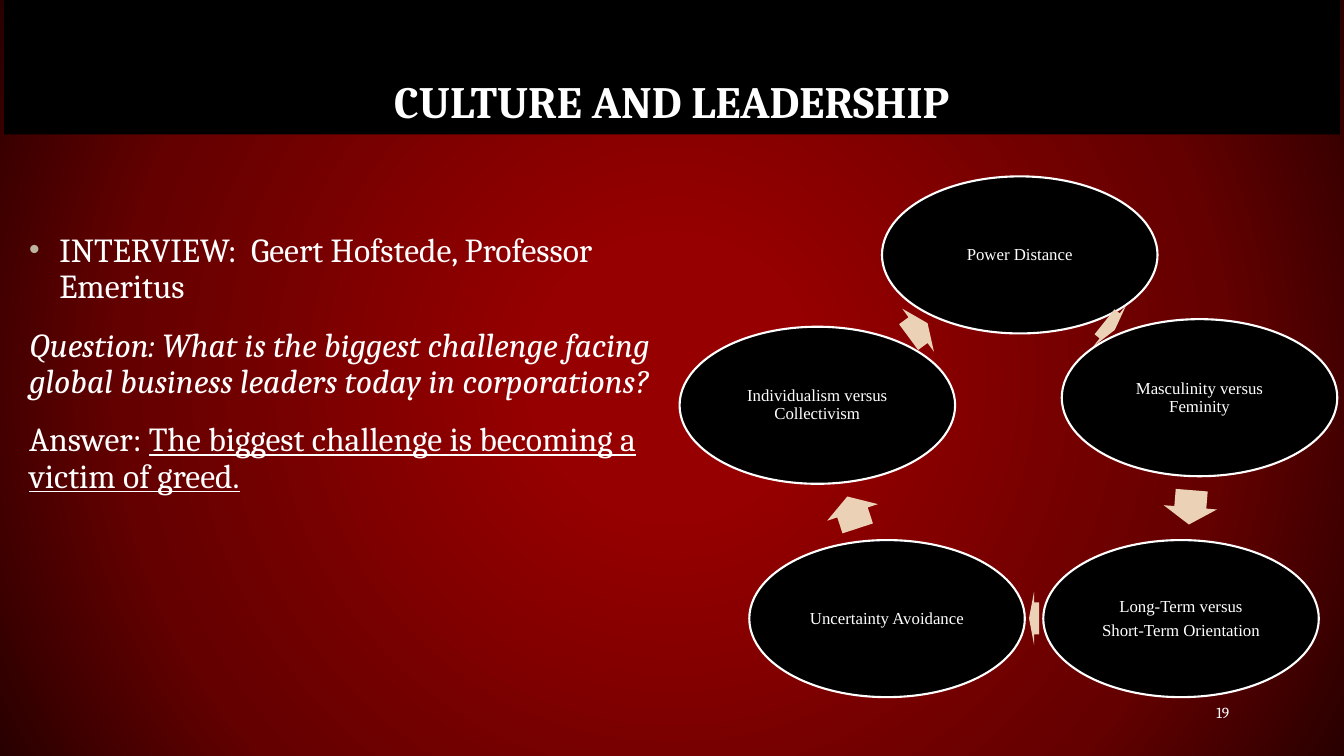
from dataclasses import dataclass

from pptx import Presentation
from pptx.dml.color import RGBColor
from pptx.enum.shapes import MSO_SHAPE
from pptx.enum.text import MSO_ANCHOR, PP_ALIGN
from pptx.oxml import parse_xml
from pptx.oxml.ns import nsdecls, qn
from pptx.util import Inches, Pt


@dataclass(frozen=True)
class Theme:
    """Colours, fonts and type sizes of the slide."""
    ink: str = "FFFFFF"
    panel: str = "000000"
    arrow: str = "EBD1B5"
    bullet: str = "BCB49E"
    glow: tuple = ((17, "960000"), (71, "650000"), (100, "290000"))
    serif: str = "Cambria"
    label_font: str = "Times New Roman"
    title_size: int = 32
    body_size: int = 24
    label_size: int = 12
    number_size: int = 11
    outline: float = 1.5


def apply(target, formats):
    """Set each attribute of target from a dict of format values."""
    for name, value in formats.items():
        setattr(target, name, value)


class SlideBuilder:
    """Draw styled elements on a grid of 160 columns by 90 rows."""
    columns, rows = 160, 90

    def __init__(self, deck, theme):
        """Open a blank page in the deck."""
        self.theme = theme
        self.column = deck.slide_width / self.columns
        self.row = deck.slide_height / self.rows
        self.page = deck.slides.add_slide(deck.slide_layouts[6])

    def place(self, left, top, width, height):
        """Turn grid cells into slide lengths."""
        return (round(left * self.column), round(top * self.row),
                round(width * self.column), round(height * self.row))

    def background(self):
        """Fill the page with a radial glow."""
        self.page.background.fill.solid()
        stops = "".join(
            f'<a:gs pos="{share * 1000}"><a:srgbClr val="{colour}"/></a:gs>'
            for share, colour in self.theme.glow)
        gradient = parse_xml(
            f'<a:gradFill {nsdecls("a")} rotWithShape="1"><a:gsLst>{stops}</a:gsLst>'
            '<a:path path="circle"><a:fillToRect l="50000" t="50000" r="50000" b="50000"/>'
            '</a:path></a:gradFill>')
        solid = next(self.page.element.iter(qn("a:solidFill")))
        solid.getparent().replace(solid, gradient)

    def shape(self, kind, cells, fill, outlined=False):
        """Add a flat preset shape."""
        shape = self.page.shapes.add_shape(kind, *self.place(*cells))
        shape.shadow.inherit = False
        shape.fill.solid()
        shape.fill.fore_color.rgb = RGBColor.from_string(fill)
        if outlined:
            shape.line.color.rgb = RGBColor.from_string(self.theme.ink)
            shape.line.width = Pt(self.theme.outline)
        else:
            shape.line.fill.background()
        return shape

    def text_box(self, cells):
        """Add an empty text box."""
        return self.page.shapes.add_textbox(*self.place(*cells))

    def set_text(self, box, paragraphs, font, layout,
                 anchor=MSO_ANCHOR.TOP, insets=(0.13, 0.07)):
        """Fill a box with paragraphs given as lists of (text, format) spans."""
        across, down = map(Inches, insets)
        frame = box.text_frame
        apply(frame, {"word_wrap": True, "vertical_anchor": anchor,
                      "margin_left": across, "margin_right": across,
                      "margin_top": down, "margin_bottom": down})
        for index, spans in enumerate(paragraphs):
            para = frame.paragraphs[0] if index == 0 else frame.add_paragraph()
            apply(para, layout)
            for text, formats in spans:
                span = para.add_run()
                span.text = text
                apply(span.font, {**font, **formats})
                span.font.color.rgb = RGBColor.from_string(self.theme.ink)

    def bullet(self, para):
        """Give a paragraph a hanging bullet."""
        properties = para._p.get_or_add_pPr()
        properties.set("marL", str(Inches(0.3)))
        properties.set("indent", str(Inches(-0.3)))
        for markup in (f'<a:buClr {nsdecls("a")}><a:srgbClr val="{self.theme.bullet}"/></a:buClr>',
                       f'<a:buSzPct {nsdecls("a")} val="90000"/>',
                       f'<a:buFont {nsdecls("a")} typeface="Arial"/>',
                       f'<a:buChar {nsdecls("a")} char="•"/>'):
            properties.append(parse_xml(markup))

    def title(self, text):
        """Add the title band."""
        band = self.shape(MSO_SHAPE.RECTANGLE, (0.5, 0, 159, 16), self.theme.panel)
        font = {"name": self.theme.serif, "size": Pt(self.theme.title_size), "bold": True}
        self.set_text(band, [[(text, {})]], font,
                      {"alignment": PP_ALIGN.CENTER, "line_spacing": 0.8}, MSO_ANCHOR.BOTTOM)

    def body(self, paragraphs):
        """Add the body text, its first paragraph bulleted."""
        box = self.text_box((1.9, 26.9, 81, 63))
        font = {"name": self.theme.serif, "size": Pt(self.theme.body_size)}
        self.set_text(box, paragraphs, font, {"line_spacing": 0.9, "space_before": Pt(16)})
        self.bullet(box.text_frame.paragraphs[0])

    def number(self, text):
        """Add the page number."""
        box = self.text_box((137, 83.6, 10.9, 2.5))
        font = {"name": self.theme.serif, "size": Pt(self.theme.number_size)}
        self.set_text(box, [[(text, {})]], font, {"alignment": PP_ALIGN.RIGHT}, MSO_ANCHOR.MIDDLE)

    def dimension(self, left, top, lines):
        """Add one labelled ellipse of the cycle."""
        ellipse = self.shape(MSO_SHAPE.OVAL, (left, top, 32.8, 18.7), self.theme.panel, True)
        font = {"name": self.theme.label_font, "size": Pt(self.theme.label_size)}
        layout = {"alignment": PP_ALIGN.CENTER, "line_spacing": 0.9, "space_after": Pt(4.2)}
        self.set_text(ellipse, [[(line, {})] for line in lines], font, layout,
                      MSO_ANCHOR.MIDDLE, (0.02, 0.02))

    def arrow(self, centre_x, centre_y, length, angle):
        """Add one turned block arrow of the cycle."""
        breadth = 6.36
        arrow = self.shape(
            MSO_SHAPE.RIGHT_ARROW,
            (centre_x - length / 2, centre_y - breadth / 2, length, breadth),
            self.theme.arrow)
        arrow.adjustments[0] = 0.6
        arrow.adjustments[1] = 0.5
        arrow.rotation = angle


CYCLE = (
    ((105, 21, ["Power Distance"]), (132.1, 38.8, 1.56, 38.6)),
    ((126.4, 38, ["Masculinity versus Feminity"]), (141.7, 60.4, 4.1, 94.6)),
    ((124.2, 64.3, ["Long-Term versus", "Short-Term Orientation"]), (123.1, 73.6, 1.2, 180)),
    ((89.2, 64.3, ["Uncertainty Avoidance"]), (101.5, 61, 4, 251.9)),
    ((80.9, 38.9, ["Individualism versus Collectivism"]), (109.3, 39.3, 2.8, 323.6)),
)

INTERVIEW = (
    [("INTERVIEW:  Geert Hofstede, Professor Emeritus", {})],
    [("Question: What is the biggest challenge facing global business leaders "
      "today in corporations?", {"italic": True})],
    [("Answer: ", {}),
     ("The biggest challenge is becoming a victim of greed.", {"underline": True})],
)


def main():
    """Build and save the deck."""
    deck = Presentation()
    apply(deck, {"slide_width": Inches(13.33), "slide_height": Inches(7.5)})
    builder = SlideBuilder(deck, Theme())
    builder.background()
    builder.number("19")
    builder.title("CULTURE AND LEADERSHIP")
    builder.body(INTERVIEW)
    for dimension, arrow in CYCLE:
        builder.dimension(*dimension)
        builder.arrow(*arrow)
    deck.save("out.pptx")


if __name__ == "__main__":
    main()
